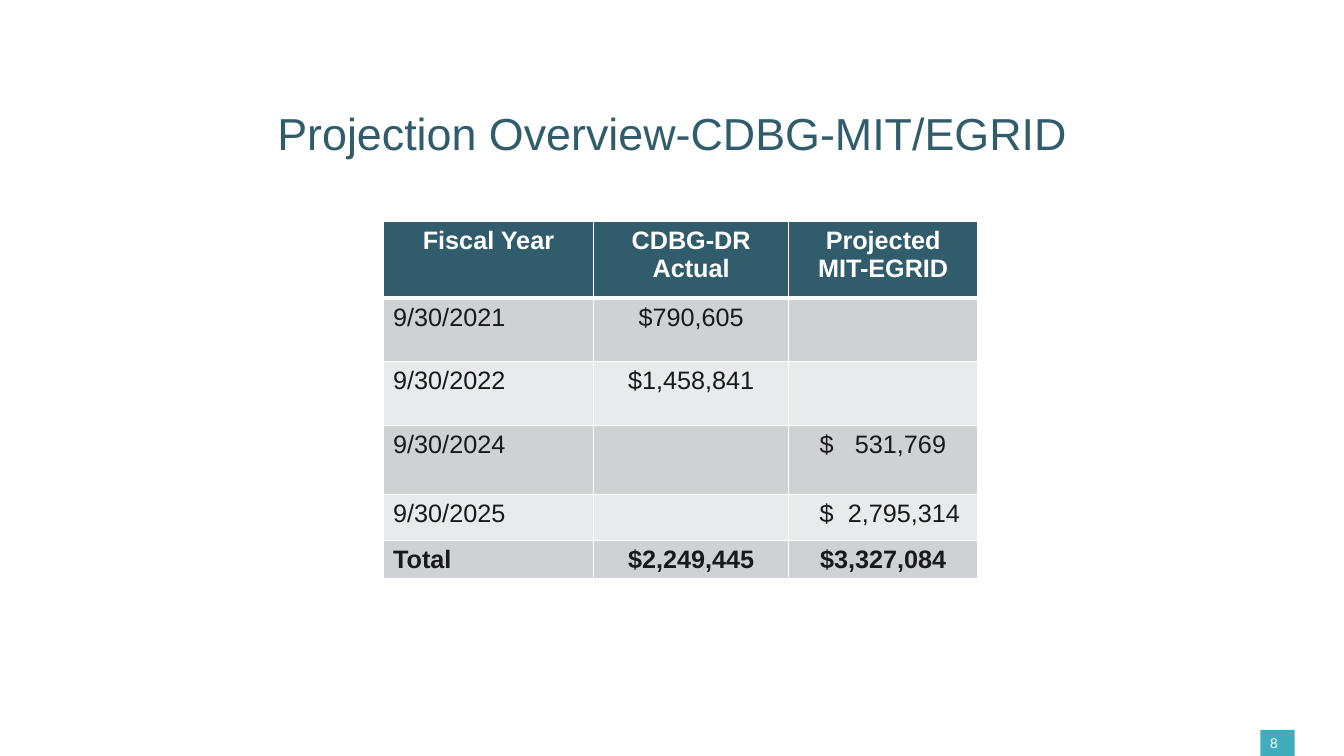
from lxml import etree
from pptx import Presentation
from pptx.dml.color import RGBColor
from pptx.enum.shapes import MSO_SHAPE
from pptx.enum.text import MSO_ANCHOR, PP_ALIGN
from pptx.oxml.ns import qn
from pptx.util import Inches, Pt

RECTANGLE = MSO_SHAPE.RECTANGLE
MIDDLE = MSO_ANCHOR.MIDDLE
LEFT, CENTER = PP_ALIGN.LEFT, PP_ALIGN.CENTER

TEAL = RGBColor(0x31, 0x5C, 0x6C)
AQUA = RGBColor(0x3F, 0xAD, 0xBB)
INK = RGBColor(0x19, 0x19, 0x19)
WHITE = RGBColor(0xFF, 0xFF, 0xFF)
BANDS = (RGBColor(0xE8, 0xEA, 0xEB), RGBColor(0xCE, 0xD2, 0xD4))

COLUMN_WIDTHS = (2.09, 1.93, 1.88)
ROW_HEIGHTS = (0.76, 0.63, 0.63, 0.69, 0.45, 0.38)
PROJECTIONS = (
    ("Fiscal Year", "CDBG-DR Actual", "Projected MIT-EGRID"),
    ("9/30/2021", "$790,605", ""),
    ("9/30/2022", "$1,458,841", ""),
    ("9/30/2024", "", "$\t531,769"),
    ("9/30/2025", "", "$\t2,795,314"),
    ("Total", "$2,249,445", "$3,327,084"),
)
AMOUNT_INDENT = 0.31
AMOUNT_TABS = {"$\t531,769": 0.35, "$\t2,795,314": 0.28}


def write(paragraph, text, size, color, bold=False, align=LEFT):
    """Put one formatted run in a paragraph."""
    paragraph.alignment = align
    run = paragraph.add_run()
    run.text = text
    run.font.color.rgb = color
    for name, value in {"name": "Arial", "size": Pt(size), "bold": bold}.items():
        setattr(run.font, name, value)


def add_title(slide, left, top, width, height):
    """Place the slide title in its box."""
    title = slide.shapes.title
    for name, value in {"left": left, "top": top, "width": width, "height": height}.items():
        setattr(title, name, Inches(value))
    title.text_frame.vertical_anchor = MIDDLE
    heading = title.text_frame.paragraphs[0]
    heading.line_spacing = 0.9
    write(heading, "Projection Overview-CDBG-MIT/EGRID", 32, TEAL, align=CENTER)


def set_borders(cell, bottom):
    """Draw white cell borders with the given bottom width."""
    properties = cell._tc.get_or_add_tcPr()
    for index, (side, points) in enumerate({"L": 1, "R": 1, "T": 1, "B": bottom}.items()):
        line = etree.Element(qn(f"a:ln{side}"), w=str(Pt(points)))
        fill = etree.SubElement(line, qn("a:solidFill"))
        etree.SubElement(fill, qn("a:srgbClr"), val=str(WHITE))
        properties.insert(index, line)


def align_amount(cell, tab):
    """Separate the dollar sign from its amount with a tab stop."""
    cell.margin_left = Inches(AMOUNT_INDENT)
    stops = etree.SubElement(cell.text_frame.paragraphs[0]._p.get_or_add_pPr(), qn("a:tabLst"))
    etree.SubElement(stops, qn("a:tab"), pos=str(Inches(tab)), algn="l")


def add_projection_table(slide, left, top):
    """Build the fiscal year table from its top left corner."""
    box = (left, top, sum(COLUMN_WIDTHS), sum(ROW_HEIGHTS))
    table = slide.shapes.add_table(len(ROW_HEIGHTS), len(COLUMN_WIDTHS), *map(Inches, box)).table
    for column, width in zip(table.columns, COLUMN_WIDTHS):
        column.width = Inches(width)
    for r, (height, values) in enumerate(zip(ROW_HEIGHTS, PROJECTIONS)):
        table.rows[r].height = Inches(height)
        header = r == 0
        bold = header or values[0] == "Total"
        for c, value in enumerate(values):
            cell = table.cell(r, c)
            cell.fill.solid()
            cell.fill.fore_color.rgb = TEAL if header else BANDS[r % 2]
            set_borders(cell, 3 if header else 1)
            tabbed = value in AMOUNT_TABS
            if tabbed:
                align_amount(cell, AMOUNT_TABS[value])
            centered = header or (c > 0 and not tabbed)
            if value:
                write(cell.text_frame.paragraphs[0], value, 18, WHITE if header else INK,
                      bold, CENTER if centered else LEFT)


def add_page_number(slide, left, top, width, height):
    """Draw the page number on its coloured tab."""
    badge = slide.shapes.add_shape(RECTANGLE, *map(Inches, (left, top, width, height)))
    badge.shadow.inherit = False
    badge.fill.solid()
    badge.fill.fore_color.rgb = AQUA
    badge.line.fill.background()
    number = slide.shapes.add_textbox(*map(Inches, (left, top, width + 0.08, height + 0.08)))
    number.text_frame.word_wrap = True
    write(number.text_frame.paragraphs[0], "8", 10, WHITE)


def main():
    """Build and save the slide."""
    deck = Presentation()
    deck.slide_width, deck.slide_height = Inches(13.33), Inches(7.5)
    slide = deck.slides.add_slide(deck.slide_layouts[5])
    add_title(slide, 0.7, 1.04, 11.94, 0.61)
    add_projection_table(slide, 3.8, 2.2)
    add_page_number(slide, 12.5, 7.24, 0.34, 0.26)
    deck.save("out.pptx")


if __name__ == "__main__":
    main()
